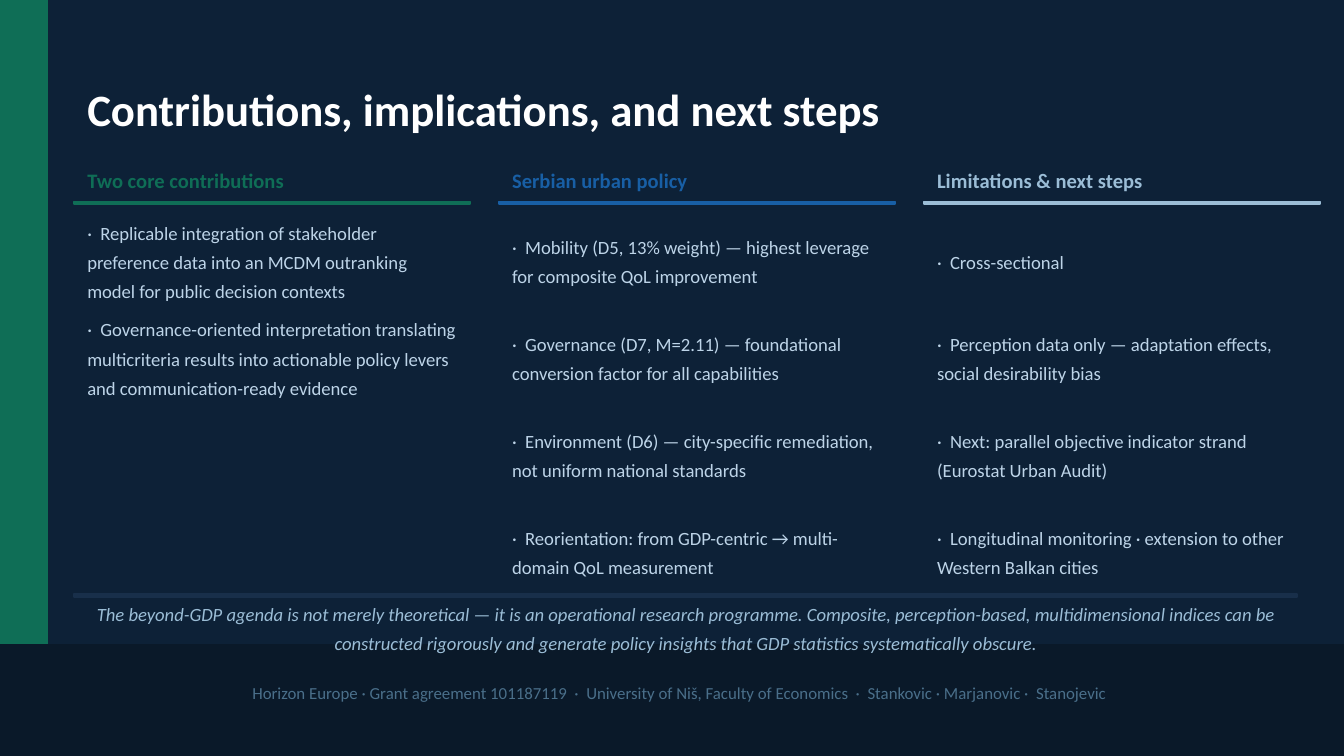
from pptx import Presentation
from pptx import util as u
from pptx.dml import color
from pptx.enum import shapes, text

COLORS = {
    "bg": "0D2137", "footer": "0A1929", "rule": "182F4A", "white": "FFFFFF",
    "green": "0F6E56", "blue": "185FA5", "pale": "9BBDD6",
    "body": "BDD4E8", "muted": "4A6F8A",
}
LEFT, COL_W, COL_STEP = 1.4, 7.49, 8.03
ROW_TOP, ROW_H, ROW_STEP = 4.06, 1.65, 1.83
RULE_H = 0.05

COLUMNS = [
    ("Two core contributions", "green", [
        "Replicable integration of stakeholder preference data into an MCDM "
        "outranking model for public decision contexts",
        "Governance-oriented interpretation translating multicriteria results "
        "into actionable policy levers and communication-ready evidence",
    ]),
    ("Serbian urban policy", "blue", [
        "Mobility (D5, 13% weight) — highest leverage for composite QoL improvement",
        "Governance (D7, M=2.11) — foundational conversion factor for all capabilities",
        "Environment (D6) — city-specific remediation, not uniform national standards",
        "Reorientation: from GDP-centric → multi-domain QoL measurement",
    ]),
    ("Limitations & next steps", "pale", [
        "Cross-sectional",
        "Perception data only — adaptation effects, social desirability bias",
        "Next: parallel objective indicator strand (Eurostat Urban Audit)",
        "Longitudinal monitoring · extension to other Western Balkan cities",
    ]),
]
CLOSING = (
    "The beyond-GDP agenda is not merely theoretical — it is an operational "
    "research programme. Composite, perception-based, multidimensional indices "
    "can be constructed rigorously and generate policy insights that GDP "
    "statistics systematically obscure."
)
CREDITS = (
    "Horizon Europe · Grant agreement 101187119  ·  University of Niš, "
    "Faculty of Economics  ·  Stankovic · Marjanovic ·  Stanojevic"
)


def rgb(name):
    return color.RGBColor.from_string(COLORS[name])


def add_block(s, box, fill):
    sp = s.shapes.add_shape(shapes.MSO_SHAPE.RECTANGLE, *map(u.Cm, box))
    sp.shadow.inherit = False
    sp.fill.solid()
    sp.fill.fore_color.rgb = rgb(fill)
    sp.line.color.rgb = rgb(fill)
    sp.line.width = u.Pt(1)


def add_text(s, box, content, size, fill, spacing=None, centred=False, **style):
    tf = s.shapes.add_textbox(*map(u.Cm, box)).text_frame
    tf.word_wrap = True
    tf.vertical_anchor = text.MSO_ANCHOR.MIDDLE
    p = tf.paragraphs[0]
    if spacing:
        p.line_spacing = spacing
    if centred:
        p.alignment = text.PP_ALIGN.CENTER
    r = p.add_run()
    r.text = content
    for key, value in {"name": "Calibri", "size": u.Pt(size), **style}.items():
        setattr(r.font, key, value)
    r.font.color.rgb = rgb(fill)


def add_column(s, index, heading, fill, points):
    x = LEFT + index * COL_STEP
    add_text(s, (x, 3, COL_W, 0.81), heading, 11, fill, bold=True)
    add_block(s, (x, 3.81, COL_W, RULE_H), fill)
    for row, point in enumerate(points):
        box = (x, ROW_TOP + row * ROW_STEP, COL_W, ROW_H)
        add_text(s, box, f"·  {point}", 10, "body", spacing=1.3)


def main():
    prs = Presentation()
    prs.slide_width, prs.slide_height = u.Cm(25.4), u.Cm(14.29)
    s = prs.slides.add_slide(prs.slide_layouts[6])
    s.background.fill.solid()
    s.background.fill.fore_color.rgb = rgb("bg")

    add_block(s, (0, 0, 0.89, 14.29), "green")
    add_block(s, (0, 12.19, 25.4, 2.1), "footer")
    add_text(s, (LEFT, 1.4, 22.86, 1.32),
             "Contributions, implications, and next steps", 24, "white", bold=True)
    for index, column in enumerate(COLUMNS):
        add_column(s, index, *column)
    add_block(s, (LEFT, 11.23, 23.11, RULE_H), "rule")
    add_text(s, (LEFT, 11.38, 23.11, 0.89), CLOSING, 10, "pale",
             spacing=1.3, centred=True, italic=True)
    add_text(s, (LEFT, 12.75, 22.86, 0.71), CREDITS, 9, "muted", centred=True)
    prs.save("out.pptx")


if __name__ == "__main__":
    main()
